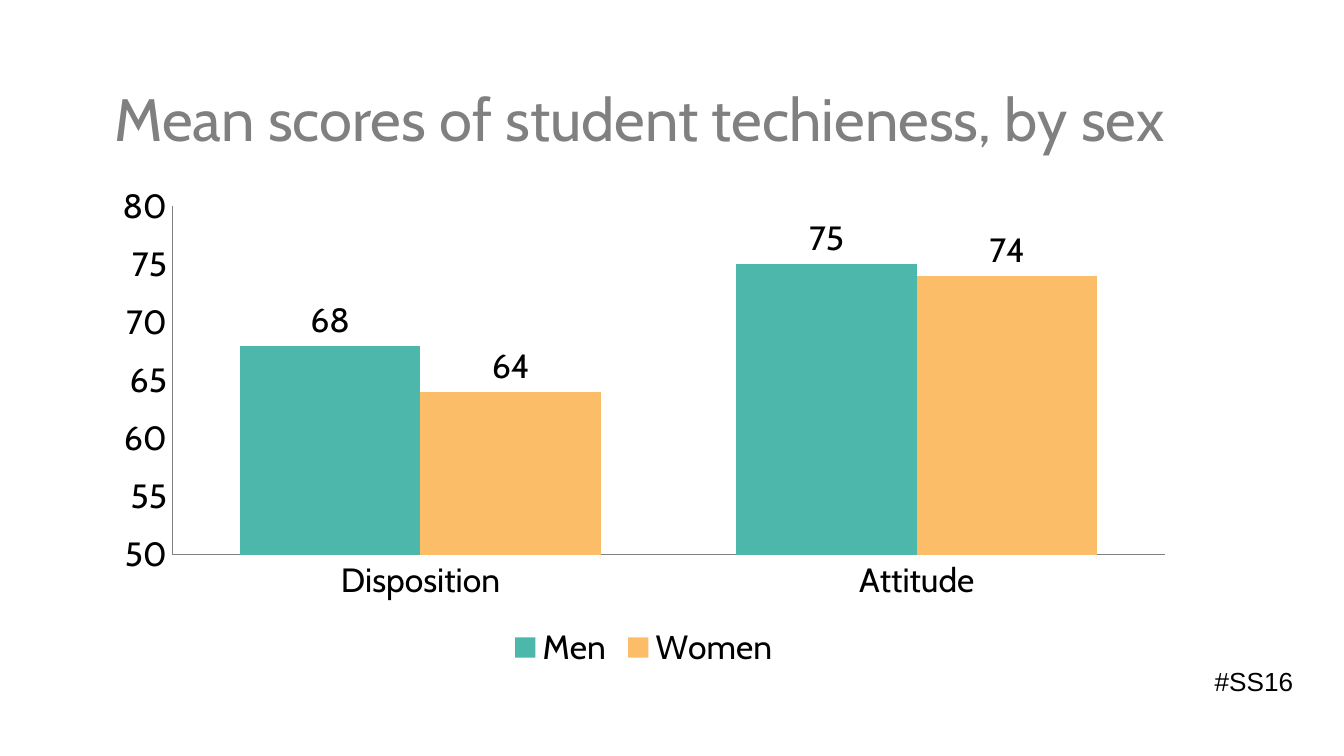
from pptx import Presentation
from pptx.chart.data import CategoryChartData
from pptx.dml.color import RGBColor
from pptx.enum.chart import XL_CHART_TYPE as ChartType
from pptx.enum.chart import XL_LABEL_POSITION as LabelPosition
from pptx.enum.chart import XL_LEGEND_POSITION as LegendPosition
from pptx.enum.chart import XL_TICK_MARK as TickMark
from pptx.enum.text import MSO_ANCHOR as Anchor
from pptx.enum.text import PP_ALIGN as Align
from pptx.util import Inches, Pt

BLACK = RGBColor(0x00, 0x00, 0x00)
GRAY = RGBColor(0x80, 0x80, 0x80)
TEAL = RGBColor(0x4D, 0xB7, 0xAC)
ORANGE = RGBColor(0xFC, 0xBD, 0x68)

TITLE_ONLY = 5
SLIDE_WIDTH = 10
SLIDE_HEIGHT = SLIDE_WIDTH * 9 / 16
LEFT, CONTENT_WIDTH = 0.75, 8.08
CATEGORIES = ["Disposition", "Attitude"]
SCORES = {"Men": ([68, 75], TEAL), "Women": ([64, 74], ORANGE)}

TITLE_FONT = {"name": "Cabin", "size": Pt(32), "bold": False}
CHART_FONT = {"name": "Cabin", "size": Pt(18), "bold": False}
HASHTAG_FONT = {"name": "Arial", "size": Pt(14)}


def format_font(font, settings, color):
    for attribute, value in settings.items():
        setattr(font, attribute, value)
    font.color.rgb = color


def add_title(slide, wording):
    title = slide.shapes.title
    title.left, title.top = Inches(LEFT), Inches(0.56)
    title.width, title.height = Inches(CONTENT_WIDTH), Inches(0.6)
    frame = title.text_frame
    frame.text = wording
    frame.vertical_anchor = Anchor.TOP
    paragraph = frame.paragraphs[0]
    paragraph.alignment = Align.LEFT
    format_font(paragraph.runs[0].font, TITLE_FONT, GRAY)


def format_axis(axis):
    axis.has_major_gridlines = False
    axis.major_tick_mark = axis.minor_tick_mark = TickMark.NONE
    axis.format.line.color.rgb = GRAY
    axis.format.line.width = Pt(0.75)
    format_font(axis.tick_labels.font, CHART_FONT, BLACK)


def format_series(series, color):
    series.format.fill.solid()
    series.format.fill.fore_color.rgb = color
    labels = series.data_labels
    labels.show_value = True
    labels.number_format, labels.number_format_is_linked = "0", False
    labels.position = LabelPosition.OUTSIDE_END
    format_font(labels.font, CHART_FONT, BLACK)


def add_score_chart(slide):
    data = CategoryChartData(number_format="0")
    data.categories = CATEGORIES
    for group, (means, _) in SCORES.items():
        data.add_series(group, means)
    chart = slide.shapes.add_chart(
        ChartType.COLUMN_CLUSTERED, Inches(LEFT), Inches(1.31),
        Inches(CONTENT_WIDTH), Inches(3.71), data).chart
    chart.has_title = False
    format_font(chart.font, CHART_FONT, BLACK)

    format_axis(chart.category_axis)
    score_axis = chart.value_axis
    format_axis(score_axis)
    score_axis.minimum_scale, score_axis.maximum_scale = 50, 80
    score_axis.major_unit = 5
    score_axis.tick_labels.number_format = "0"
    score_axis.tick_labels.number_format_is_linked = False

    columns = chart.plots[0]
    columns.gap_width, columns.overlap = 75, 0
    columns.vary_by_categories = False
    for series in columns.series:
        format_series(series, SCORES[series.name][1])

    chart.has_legend = True
    chart.legend.position = LegendPosition.BOTTOM
    chart.legend.include_in_layout = False
    format_font(chart.legend.font, CHART_FONT, BLACK)


def add_hashtag(slide, wording):
    hashtag = slide.shapes.add_textbox(
        Inches(8.83), Inches(4.9), Inches(1), Inches(0.34))
    frame = hashtag.text_frame
    frame.word_wrap = True
    frame.text = wording
    paragraph = frame.paragraphs[0]
    paragraph.alignment = Align.CENTER
    format_font(paragraph.runs[0].font, HASHTAG_FONT, BLACK)


def main():
    deck = Presentation()
    deck.slide_width, deck.slide_height = Inches(SLIDE_WIDTH), Inches(SLIDE_HEIGHT)
    slide = deck.slides.add_slide(deck.slide_layouts[TITLE_ONLY])
    add_title(slide, "Mean scores of student techieness, by sex")
    add_score_chart(slide)
    add_hashtag(slide, "#SS16")
    deck.save("out.pptx")


if __name__ == "__main__":
    main()
